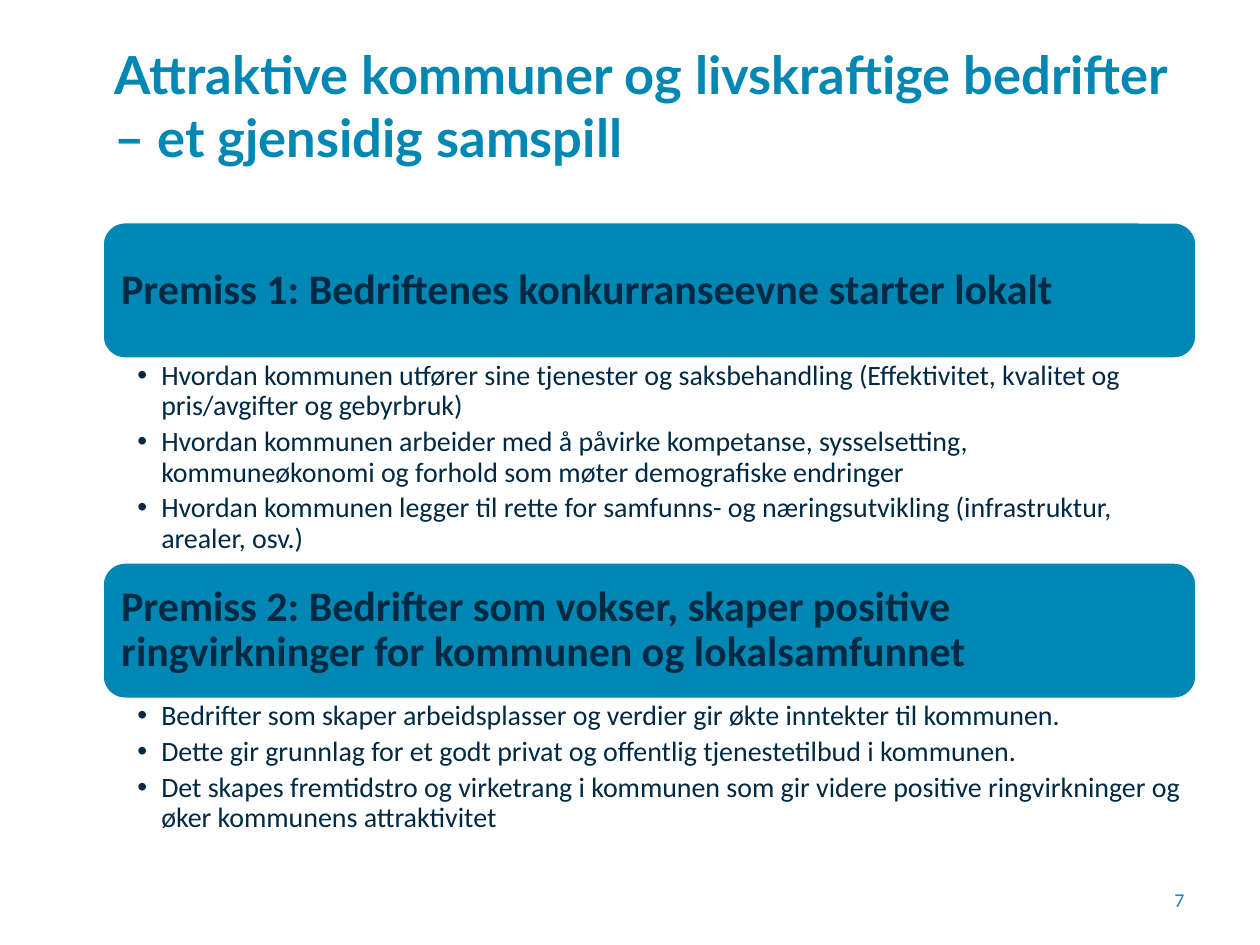
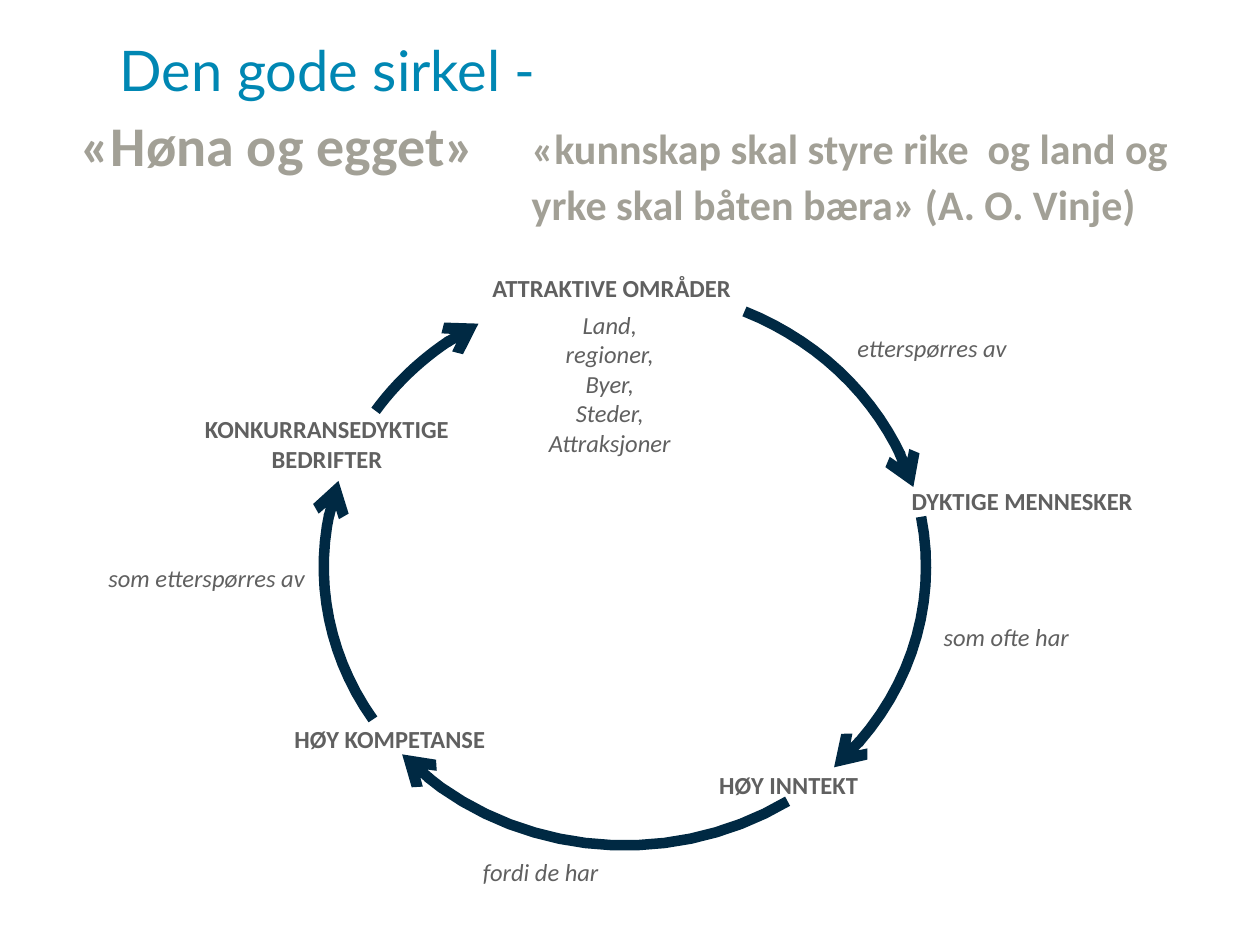
"""Builds two slides: two premises with bullets, and a circle of arrows with labels."""
import math
import pptx
import pptx.util
import pptx.dml.color
import pptx.enum.shapes
import pptx.enum.text
from lxml import etree
from pptx.oxml.ns import qn

Inches, Pt = pptx.util.Inches, pptx.util.Pt
ALIGN, ANCHOR = pptx.enum.text.PP_ALIGN, pptx.enum.text.MSO_ANCHOR

BLUE, NAVY, GREY, SAND, WHITE = "0087B3", "002943", "606060", "A2A096", "FFFFFF"

PREMISES_TITLE = "Attraktive kommuner og livskraftige bedrifter – et gjensidig samspill"
PREMISES = [
    ("Premiss 1: Bedriftenes konkurranseevne starter lokalt", [
        "Hvordan kommunen utfører sine tjenester og saksbehandling (Effektivitet, kvalitet og pris/avgifter og gebyrbruk)",
        "Hvordan kommunen arbeider med å påvirke kompetanse, sysselsetting, kommuneøkonomi og forhold som møter demografiske endringer",
        "Hvordan kommunen legger til rette for samfunns- og næringsutvikling (infrastruktur, arealer, osv.)",
    ]),
    ("Premiss 2: Bedrifter som vokser, skaper positive ringvirkninger for kommunen og lokalsamfunnet", [
        "Bedrifter som skaper arbeidsplasser og verdier gir økte inntekter til kommunen.",
        "Dette gir grunnlag for et godt privat og offentlig tjenestetilbud i kommunen.",
        "Det skapes fremtidstro og virketrang i kommunen som gir videre positive ringvirkninger og øker kommunens attraktivitet",
    ]),
]
PREMISE_LEFT, PREMISE_TOP, PREMISE_WIDTH = 0.81, 1.76, 8.69
PREMISE_STEP, HEADING_HEIGHT = 2.7, 1.09
PAGE_NUMBER = "7"

CIRCLE_TITLE = "Den gode sirkel -"
QUOTES = [
    ("«kunnskap skal styre rike  og land og yrke skal båten bæra» (A. O. Vinje)", 24, (4.22, 0.42, 5.62, 1.4)),
    ("«Høna og egget»", 32, (0.64, 0.84, 8.32, 0.57)),
]
STATIONS = [
    (["ATTRAKTIVE OMRÅDER"], ALIGN.RIGHT, (3.79, 2.12, 2.11, 0.34)),
    (["DYKTIGE MENNESKER"], ALIGN.RIGHT, (7.12, 3.81, 1.97, 0.34)),
    (["HØY INNTEKT"], ALIGN.RIGHT, (5.6, 6.06, 1.31, 0.34)),
    (["HØY KOMPETANSE"], ALIGN.RIGHT, (2.22, 5.7, 1.73, 0.34)),
    (["KONKURRANSEDYKTIGE", "BEDRIFTER"], ALIGN.CENTER, (1.52, 3.24, 2.15, 0.57)),
]
RELATIONS = [
    (["etterspørres av"], ALIGN.RIGHT, (6.69, 2.59, 1.4, 0.34)),
    (["som ofte har"], ALIGN.LEFT, (7.39, 4.89, 1.26, 0.34)),
    (["fordi de har"], ALIGN.RIGHT, (3.72, 6.75, 1.13, 0.34)),
    (["som etterspørres av"], ALIGN.RIGHT, (0.75, 4.42, 1.77, 0.34)),
]
PLACES = ["Land, regioner,", "Byer,", "Steder,", "Attraksjoner"]
CIRCLE_CENTRE, CIRCLE_RADII = (4.96, 4.5), (2.39, 2.21)
ARCS = [(-66.6, -16.7), (-10.4, 46), (57.3, 137.7), (146.8, 198), (214.1, 240.9)]


def rgb(color):
    return pptx.dml.color.RGBColor.from_string(color)


def add_bullet(p, indent=0.19):
    pPr = p._p.get_or_add_pPr()
    pPr.set("marL", str(Inches(indent)))
    pPr.set("indent", str(-Inches(indent)))
    etree.SubElement(pPr, qn("a:buFont")).set("typeface", "Arial")
    etree.SubElement(pPr, qn("a:buChar")).set("char", "•")


def write(tf, lines, size=14, font="Calibri", color=GREY, bold=False, italic=False,
          align=ALIGN.LEFT, anchor=ANCHOR.TOP, insets=(0.1, 0.05, 0.1, 0.05),
          wrap=True, spacing=None, after=0, bullet=False):
    tf.auto_size = pptx.enum.text.MSO_AUTO_SIZE.NONE
    tf.word_wrap, tf.vertical_anchor = wrap, anchor
    tf.margin_left, tf.margin_top, tf.margin_right, tf.margin_bottom = map(Inches, insets)
    for i, line in enumerate(lines):
        p = tf.add_paragraph() if i else tf.paragraphs[0]
        if bullet:
            add_bullet(p)
        p.alignment, p.line_spacing, p.space_after = align, spacing, Pt(after)
        r = p.add_run()
        r.text = line
        r.font.size, r.font.name = Pt(size), font
        r.font.bold, r.font.italic = bold, italic
        r.font.color.rgb = rgb(color)


def add_text(s, box, lines, **fmt):
    write(s.shapes.add_textbox(*map(Inches, box)).text_frame, lines, **fmt)


def add_titled_slide(prs, title, box, size, bold=False):
    s = prs.slides.add_slide(prs.slide_layouts[5])
    sp = s.shapes.title
    sp.left, sp.top, sp.width, sp.height = map(Inches, box)
    write(sp.text_frame, [title], size=size, font="Lato", color=BLUE, bold=bold, anchor=ANCHOR.MIDDLE)
    return s


def add_premise(s, top, heading, points):
    sp = s.shapes.add_shape(pptx.enum.shapes.MSO_SHAPE.ROUNDED_RECTANGLE,
                            *map(Inches, (PREMISE_LEFT, top, PREMISE_WIDTH, HEADING_HEIGHT)))
    sp.shadow.inherit = False
    sp.fill.solid()
    sp.fill.fore_color.rgb = rgb(BLUE)
    sp.line.color.rgb, sp.line.width = rgb(WHITE), Pt(2)
    write(sp.text_frame, [heading], size=24, color=NAVY, bold=True, anchor=ANCHOR.MIDDLE,
          insets=(0.1,) * 4, spacing=0.9)
    add_text(s, (PREMISE_LEFT, top + HEADING_HEIGHT, PREMISE_WIDTH, PREMISE_STEP - HEADING_HEIGHT),
             points, size=16, color=NAVY, insets=(0.28, 0.02, 0.12, 0.02),
             spacing=0.9, after=3.2, bullet=True)


def add_arc_arrow(s, start, end, steps=16):
    angles = [math.radians(start + (end - start) * i / steps) for i in range(steps + 1)]
    points = [(Inches(CIRCLE_CENTRE[0] + CIRCLE_RADII[0] * math.cos(a)),
               Inches(CIRCLE_CENTRE[1] + CIRCLE_RADII[1] * math.sin(a))) for a in angles]
    builder = s.shapes.build_freeform(*points[0])
    builder.add_line_segments(points[1:], close=False)
    sp = builder.convert_to_shape()
    sp.shadow.inherit = False
    sp.fill.background()
    sp.line.color.rgb, sp.line.width = rgb(NAVY), Pt(6)
    etree.SubElement(sp.line._get_or_add_ln(), qn("a:tailEnd")).set("type", "arrow")


def build_premises(prs):
    s = add_titled_slide(prs, PREMISES_TITLE, (0.81, 0.21, 8.69, 1.25), 30, bold=True)
    for i, (heading, points) in enumerate(PREMISES):
        add_premise(s, PREMISE_TOP + i * PREMISE_STEP, heading, points)
    add_text(s, (8.83, 6.95, 0.67, 0.4), [PAGE_NUMBER], size=10, font="Lato", color=BLUE,
             align=ALIGN.RIGHT, anchor=ANCHOR.MIDDLE)


def build_circle(prs):
    s = add_titled_slide(prs, CIRCLE_TITLE, (0.85, -0.15, 8.32, 1.4), 32)
    for labels, style in ((STATIONS, {"bold": True}), (RELATIONS, {"italic": True})):
        for lines, align, box in labels:
            add_text(s, box, lines, align=align, wrap=False, **style)
    for start, end in ARCS:
        add_arc_arrow(s, start, end)
    add_text(s, (4.21, 2.41, 1.26, 1.28), PLACES, italic=True, align=ALIGN.CENTER)
    for quote, size, box in QUOTES:
        add_text(s, box, [quote], size=size, color=SAND, bold=True, anchor=ANCHOR.BOTTOM,
                 insets=(0,) * 4, spacing=Pt(32))


def main():
    prs = pptx.Presentation()
    prs.slide_width, prs.slide_height = Inches(10), Inches(7.5)
    build_premises(prs)
    build_circle(prs)
    prs.save("out.pptx")


if __name__ == "__main__":
    main()
